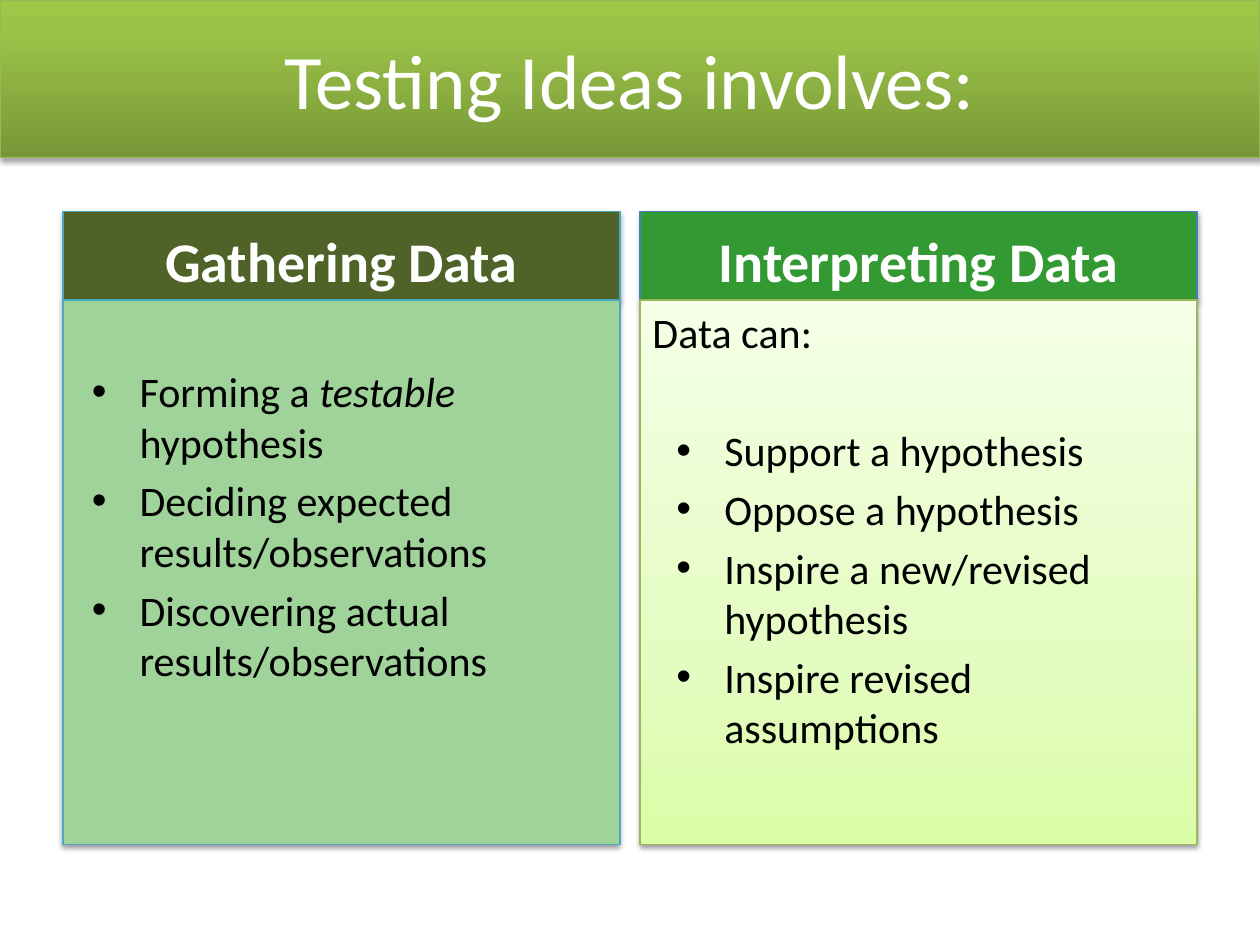
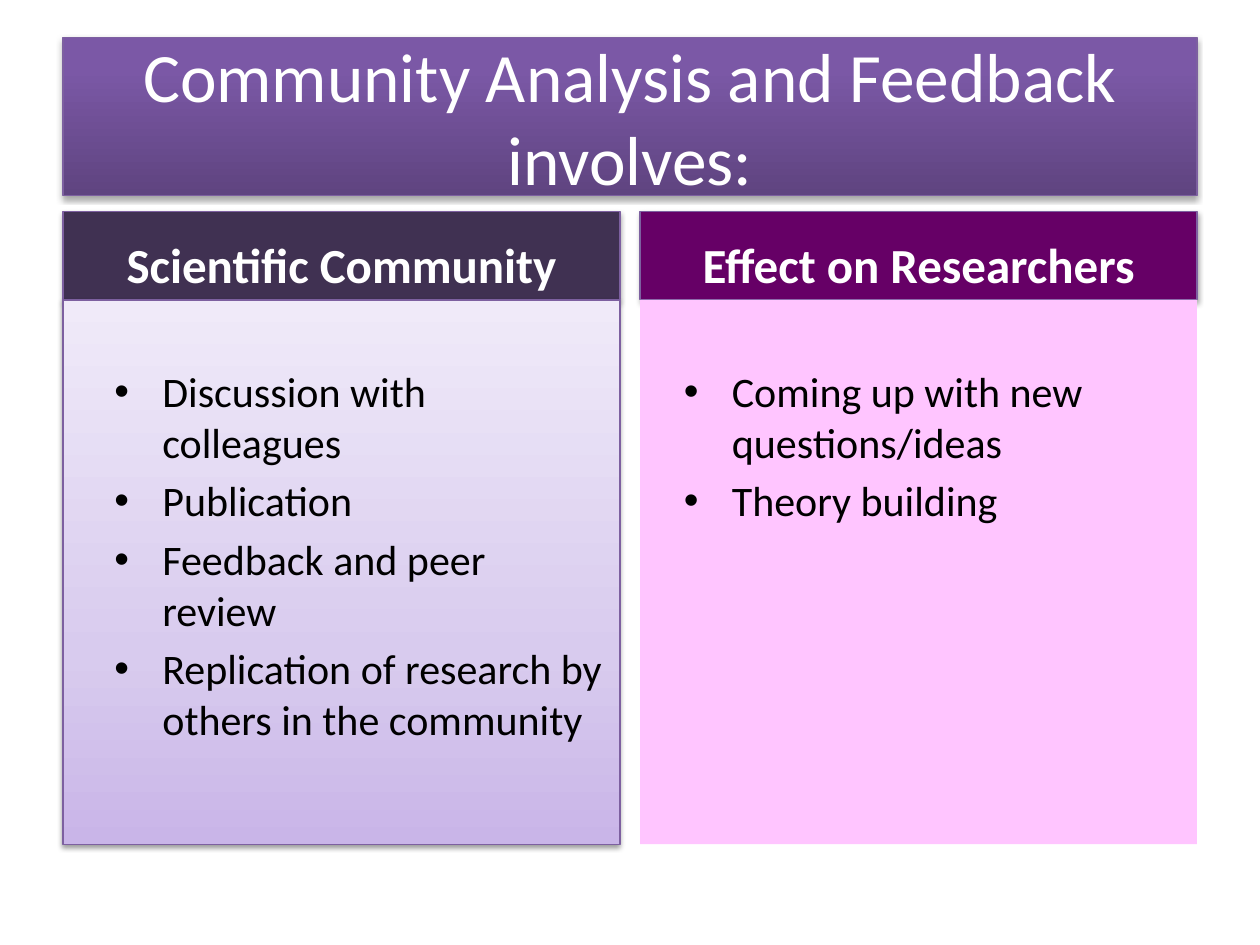
from dataclasses import dataclass
from typing import Optional, Union

from lxml.etree import SubElement
from pptx import Presentation
from pptx.dml.color import RGBColor as Rgb
from pptx.enum.shapes import MSO_SHAPE as Kind
from pptx.enum.text import MSO_ANCHOR as Anchor, PP_ALIGN as Align
from pptx.oxml.ns import qn
from pptx.util import Inches, Pt

FONT = "Calibri"
WHITE, BLACK = Rgb(255, 255, 255), Rgb(0, 0, 0)
GREEN, TEAL, BLUE = Rgb(0x98, 0xB9, 0x55), Rgb(0x46, 0xAA, 0xC5), Rgb(0x4B, 0x7E, 0xBC)
OLIVE, LEAF, MINT = Rgb(0x4F, 0x62, 0x28), Rgb(0x33, 0x99, 0x33), Rgb(0xA0, 0xD3, 0x99)
VIOLET, PLUM = Rgb(0x7D, 0x60, 0xA0), Rgb(0x40, 0x31, 0x52)
PURPLE, PINK = Rgb(0x66, 0x00, 0x66), Rgb(0xFF, 0xC5, 0xFF)

# Gradient stops run from the bottom edge to the top: (percent, colour)
Grade = tuple[tuple[int, Rgb], ...]
GRASS: Grade = ((0, Rgb(0x77, 0x97, 0x37)), (80, Rgb(0x9B, 0xC3, 0x48)),
                (100, Rgb(0x9D, 0xC7, 0x46)))
LIME: Grade = ((0, Rgb(0xDA, 0xFD, 0xA7)), (35, Rgb(0xE4, 0xFC, 0xC2)),
               (100, Rgb(0xF5, 0xFF, 0xE7)))
GRAPE: Grade = ((0, Rgb(0x5F, 0x44, 0x80)), (80, Rgb(0x7B, 0x58, 0xA6)),
                (100, Rgb(0x7C, 0x57, 0xA8)))
LILAC: Grade = ((0, Rgb(0xC9, 0xB5, 0xE8)), (35, Rgb(0xD8, 0xCB, 0xEE)),
                (100, Rgb(0xF0, 0xEA, 0xF9)))

EDGE, GAP, WIDE = 0.5, 0.16, 4.42
TOP, HEAD, TALL = 1.68, 0.7, 4.32
BODY = 24
SPACE = 0.2 * BODY
BLANK = 1.22 * BODY + SPACE  # one empty line of body text, in points
HANG = 0.38


@dataclass
class Look:
    fill: Union[Rgb, Grade]
    line: Optional[Rgb]
    fade: int = 35  # shadow opacity, percent
    drop: float = 1.8  # shadow distance, points


@dataclass
class Item:
    text: str
    italic: bool = False


@dataclass
class Panel:
    head: str
    top: Look
    body: Look
    indent: float
    items: list[list[Item]]
    lead: str = ""


@dataclass
class Page:
    title: str
    size: float
    box: tuple[float, float, float, float]
    look: Look
    head: int
    panels: list[Panel]


def plain(*lines: str) -> list[list[Item]]:
    return [[Item(line)] for line in lines]


def shade(shape, look: Look) -> None:
    """Give the shape a soft shadow straight below it."""
    glow = shape._element.spPr.find(qn("a:effectLst"))
    cast = SubElement(glow, qn("a:outerShdw"), blurRad=str(Pt(3.1)),
                      dist=str(Pt(look.drop)), dir="5400000", rotWithShape="0")
    tone = SubElement(cast, qn("a:srgbClr"), val=str(BLACK))
    SubElement(tone, qn("a:alpha"), val=str(look.fade * 1000))


def paint(shape, fill: Union[Rgb, Grade]) -> None:
    if isinstance(fill, Rgb):
        shape.fill.solid()
        shape.fill.fore_color.rgb = fill
        return
    shape.fill.gradient()
    shape.fill.gradient_angle = 90
    stops = shape._element.spPr.find(qn("a:gradFill")).find(qn("a:gsLst"))
    stops.clear()
    for place, color in fill:
        stop = SubElement(stops, qn("a:gs"), pos=str(place * 1000))
        SubElement(stop, qn("a:srgbClr"), val=str(color))


def block(slide, box: tuple[float, float, float, float], look: Look, anchor: Anchor):
    """Draw a styled rectangle and return its text frame."""
    shape = slide.shapes.add_shape(Kind.RECTANGLE, *map(Inches, box))
    shape.shadow.inherit = False
    paint(shape, look.fill)
    if look.line is None:
        shape.line.fill.background()
    else:
        shape.line.color.rgb = look.line
        shape.line.width = Pt(0.75)
        shade(shape, look)
    frame = shape.text_frame
    frame.word_wrap = True
    frame.vertical_anchor = anchor
    return frame


def write(para, text: str, size: float, color: Rgb, bold: bool = False,
          italic: bool = False) -> None:
    run = para.add_run()
    run.text = text
    font = run.font
    font.name, font.size, font.bold, font.italic = FONT, Pt(size), bold, italic
    font.color.rgb = color


def label(slide, box: tuple[float, float, float, float], look: Look, text: str,
          size: float, anchor: Anchor, bold: bool = False) -> None:
    para = block(slide, box, look, anchor).paragraphs[0]
    para.alignment = Align.CENTER
    write(para, text, size, WHITE, bold)


def dot(para, indent: float) -> None:
    """Turn the paragraph into a hanging bullet."""
    props = para._p.get_or_add_pPr()
    props.set("marL", str(Inches(indent)))
    props.set("indent", str(-Inches(HANG)))
    SubElement(props, qn("a:buFont"), typeface="Arial")
    SubElement(props, qn("a:buChar"), char="•")


def draw_panel(slide, panel: Panel, left: float, size: int) -> None:
    label(slide, (left, TOP, WIDE, HEAD), panel.top, panel.head, size,
          Anchor.BOTTOM, True)
    frame = block(slide, (left, TOP + HEAD, WIDE, TALL), panel.body, Anchor.TOP)
    para = frame.paragraphs[0]
    para.alignment = Align.LEFT
    if panel.lead:
        write(para, panel.lead, BODY, BLACK)
    else:
        frame.margin_top += Pt(BLANK)
    for spot, item in enumerate(panel.items):
        if spot or panel.lead:
            para = frame.add_paragraph()
            para.alignment = Align.LEFT
            para.space_before = Pt(SPACE if spot else SPACE + BLANK)
        dot(para, panel.indent)
        for part in item:
            write(para, part.text, BODY, BLACK, italic=part.italic)


def draw_page(deck, page: Page) -> None:
    slide = deck.slides.add_slide(deck.slide_layouts[6])
    label(slide, page.box, page.look, page.title, page.size, Anchor.MIDDLE)
    for spot, panel in enumerate(page.panels):
        draw_panel(slide, panel, EDGE + spot * (WIDE + GAP), page.head)


PAGES = [
    Page("Testing Ideas involves:", 44, (0, 0, 10, 1.25), Look(GRASS, GREEN), 32, [
        Panel("Gathering Data", Look(OLIVE, TEAL), Look(MINT, TEAL, 38, 1.6), 0.51, [
            [Item("Forming a "), Item("testable ", True), Item("hypothesis")],
            *plain("Deciding expected results/observations",
                   "Discovering actual results/observations"),
        ]),
        Panel("Interpreting Data", Look(LEAF, BLUE), Look(LIME, GREEN, 38, 1.6), 0.57,
              plain("Support a hypothesis", "Oppose a hypothesis",
                    "Inspire a new/revised hypothesis",
                    "Inspire revised assumptions"),
              "Data can:"),
    ]),
    Page("Community Analysis and Feedback involves:", 39.6, (EDGE, 0.3, 9, 1.25),
         Look(GRAPE, VIOLET), 28, [
        Panel("Scientific Community", Look(PLUM, VIOLET),
              Look(LILAC, VIOLET, 38, 1.6), 0.69,
              plain("Discussion with colleagues", "Publication",
                    "Feedback and peer review",
                    "Replication of research by others in the community")),
        Panel("Effect on Researchers", Look(PURPLE, VIOLET), Look(PINK, None), 0.63,
              plain("Coming up with new questions/ideas", "Theory building")),
    ]),
]


def main() -> None:
    deck = Presentation()
    deck.slide_width, deck.slide_height = Inches(10), Inches(7.5)
    for page in PAGES:
        draw_page(deck, page)
    deck.save("out.pptx")


if __name__ == "__main__":
    main()
